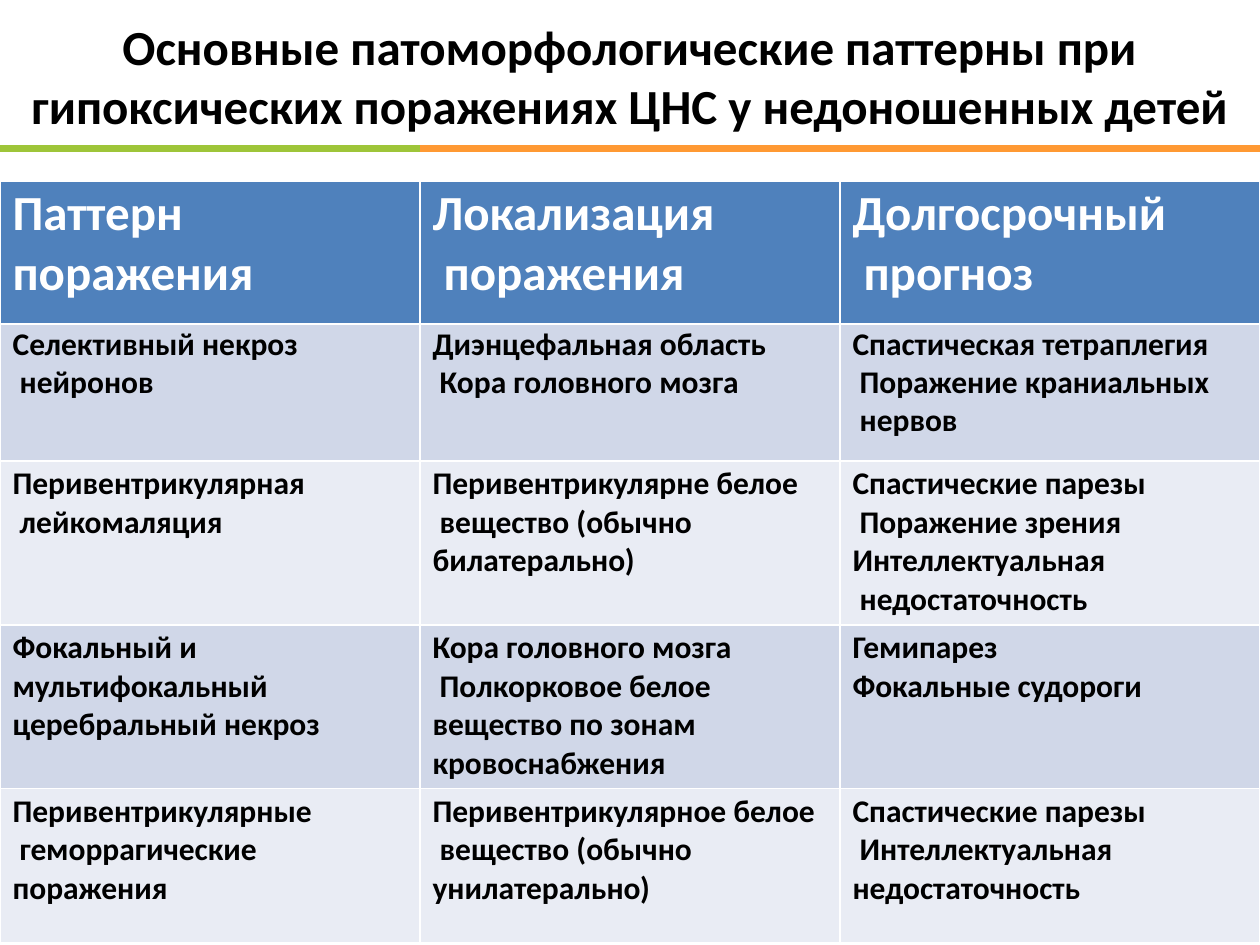
"""Build a slide with a table of hypoxic brain injury patterns in preterm infants."""
from typing import NamedTuple

from lxml import etree
from pptx import Presentation
from pptx.dml.color import RGBColor
from pptx.enum.text import MSO_ANCHOR, PP_ALIGN
from pptx.oxml.ns import qn
from pptx.util import Inches, Pt

CENTER, LEFT = PP_ALIGN.CENTER, PP_ALIGN.LEFT
TOP = MSO_ANCHOR.TOP
FONT = "Calibri"
BLACK, WHITE = "000000", "FFFFFF"
GREEN, ORANGE = "9EC539", "FF9933"
BLUE, BAND_DARK, BAND_LIGHT = "4F81BC", "D0D7E8", "E9ECF4"
COLUMNS = 3
RULE_HEIGHT = 0.26


class Row(NamedTuple):
    """One table row; each cell is a list of paragraphs."""

    height: float
    fill: str
    cells: list[list[str]]
    size: int = 18
    color: str = BLACK
    before: float = 2.5
    margin_top: float = 0.03


TITLE = [
    "Основные патоморфологические паттерны при",
    "гипоксических поражениях ЦНС у недоношенных детей",
]
ROWS = [
    Row(1.13, BLUE, [
        ["Паттерн\vпоражения"],
        ["Локализация\v поражения"],
        ["Долгосрочный\v прогноз"],
    ], size=28, color=WHITE, before=1.8, margin_top=0.02),
    Row(1.09, BAND_DARK, [
        ["Селективный некроз\v нейронов"],
        ["Диэнцефальная область\v Кора головного мозга"],
        ["Спастическая тетраплегия\v Поражение краниальных\v нервов"],
    ], before=0.9, margin_top=0.01),
    Row(1.3, BAND_LIGHT, [
        ["Перивентрикулярная\v лейкомаляция"],
        ["Перивентрикулярне белое\v вещество (обычно", "билатерально)"],
        ["Спастические парезы\v Поражение зрения",
         "Интеллектуальная\v недостаточность"],
    ]),
    Row(1.3, BAND_DARK, [
        ["Фокальный и", "мультифокальный", "церебральный некроз"],
        ["Кора головного мозга\v Полкорковое белое",
         "вещество по зонам", "кровоснабжения"],
        ["Гемипарез", "Фокальные судороги"],
    ]),
    Row(1.22, BAND_LIGHT, [
        ["Перивентрикулярные\v геморрагические\vпоражения"],
        ["Перивентрикулярное белое\v вещество (обычно", "унилатерально)"],
        ["Спастические парезы\v Интеллектуальная\vнедостаточность"],
    ]),
]


def rgb(value: str) -> RGBColor:
    """Turn a hex string into a colour."""
    return RGBColor.from_string(value)


def set_format(target, values: dict) -> None:
    """Set every named attribute on the target."""
    for name, value in values.items():
        setattr(target, name, value)


def write(tf, lines: list[str], size: int, color: str, align, before: float) -> None:
    """Fill a text frame with bold paragraphs."""
    for i, line in enumerate(lines):
        p = tf.paragraphs[0] if i == 0 else tf.add_paragraph()
        p.text = line
        set_format(p, {"alignment": align, "space_before": Pt(0 if i else before)})
        for r in p.runs:
            set_format(r.font, {"name": FONT, "size": Pt(size), "bold": True})
            r.font.color.rgb = rgb(color)


def add_title(s) -> None:
    """Add the centred two-line title."""
    tf = s.shapes.add_textbox(
        Inches(0.23), Inches(0.12), Inches(9.53), Inches(0.96)).text_frame
    set_format(tf, {"word_wrap": True, "margin_left": 0, "margin_right": 0,
                    "margin_top": Inches(0.01), "margin_bottom": 0})
    write(tf, TITLE, 28, BLACK, CENTER, 0.9)


def set_borders(cell, top: tuple[str, float], side: float) -> None:
    """Draw the four borders of a cell; side is the left and right width."""
    tc_pr = cell._tc.get_or_add_tcPr()
    sides = {"L": (WHITE, side), "R": (WHITE, side), "T": top, "B": (WHITE, 1)}
    for name, (color, width) in sides.items():
        ln = etree.SubElement(tc_pr, qn(f"a:ln{name}"), w=str(Pt(width)))
        if width:
            fill = etree.SubElement(ln, qn("a:solidFill"))
            etree.SubElement(fill, qn("a:srgbClr"), val=color)
        else:
            etree.SubElement(ln, qn("a:noFill"))


def set_rule_cell(cell, color: str) -> None:
    """Make an empty, unfilled cell whose top border is a thick rule."""
    set_format(cell, {"margin_top": 0, "margin_bottom": 0})
    set_borders(cell, (color, 4.25), 0)
    cell.fill.background()
    p = cell.text_frame.paragraphs[0]
    etree.SubElement(p._p, qn("a:endParaRPr"), sz="1000")


def set_text_cell(cell, row: Row, lines: list[str]) -> None:
    """Fill and label one cell of the given row."""
    set_format(cell, {"margin_left": Inches(0.1), "margin_right": 0,
                      "margin_top": Inches(row.margin_top), "margin_bottom": 0,
                      "vertical_anchor": TOP})
    set_borders(cell, (WHITE, 1), 1)
    cell.fill.solid()
    cell.fill.fore_color.rgb = rgb(row.fill)
    write(cell.text_frame, lines, row.size, row.color, LEFT, row.before)


def add_pattern_table(s) -> None:
    """Add the table with its coloured rule on top."""
    heights = [RULE_HEIGHT] + [row.height for row in ROWS]
    table = s.shapes.add_table(
        len(heights), COLUMNS, 0, Inches(1.18), Inches(10), Inches(sum(heights))).table
    set_format(table, {"first_row": False, "horz_banding": False})
    for table_row, height in zip(table.rows, heights):
        table_row.height = Inches(height)
    for c, color in enumerate([GREEN, ORANGE, ORANGE]):
        set_rule_cell(table.cell(0, c), color)
    for i, row in enumerate(ROWS, start=1):
        for c, lines in enumerate(row.cells):
            set_text_cell(table.cell(i, c), row, lines)


def main() -> None:
    """Build and save the slide."""
    prs = Presentation()
    set_format(prs, {"slide_width": Inches(10), "slide_height": Inches(7.5)})
    s = prs.slides.add_slide(prs.slide_layouts[6])
    add_title(s)
    add_pattern_table(s)
    prs.save("out.pptx")


if __name__ == "__main__":
    main()
